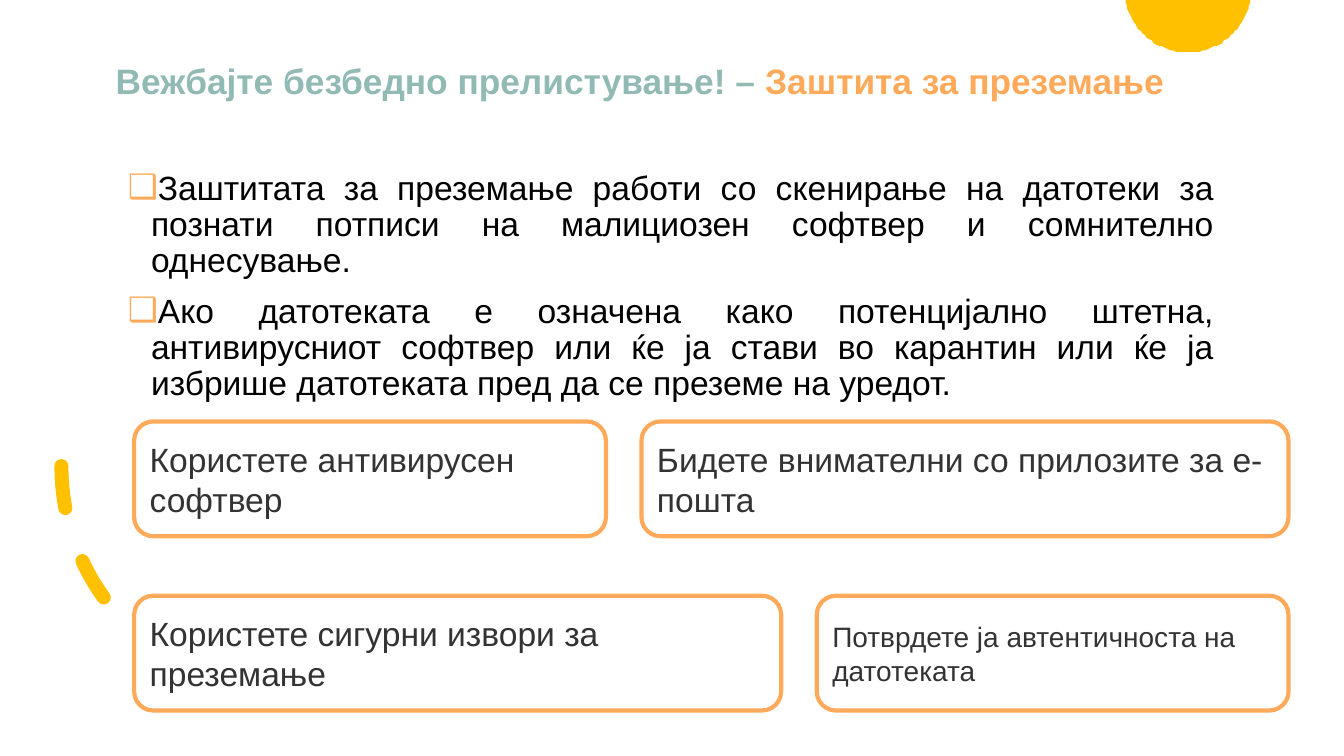
import math
from dataclasses import dataclass

import lxml.etree
import pptx
import pptx.dml.color
import pptx.enum.dml
import pptx.enum.shapes
import pptx.enum.text
import pptx.oxml.ns
import pptx.util

Pt = pptx.util.Pt
KIND = pptx.enum.shapes.MSO_SHAPE
ALIGN = pptx.enum.text.PP_ALIGN
ANCHOR = pptx.enum.text.MSO_ANCHOR
HUES = {
    "gold": "FFC000",
    "peach": "FFAA5A",
    "sage": "92BAB5",
    "ink": "333333",
    "black": "000000",
    "white": "FFFFFF",
}
FONT = "Arial"

# Grid of cards
LEFT, GAP = 95.8, 25.4
SHORT, LONG, HIGH = 337, 462.2, 82
ROWS = (301, 425.5)


@dataclass
class Card:
    text: str
    row: int
    left: float
    width: float
    size: float = 24
    kind: KIND = KIND.ROUNDED_RECTANGLE


CARDS = [
    Card("Користете антивирусен софтвер", 0, LEFT, SHORT,
         kind=KIND.FLOWCHART_ALTERNATE_PROCESS),
    Card("Користете сигурни извори за преземање", 1, LEFT, LONG),
    Card("Потврдете ја автентичноста на датотеката", 1, LEFT + LONG + GAP, SHORT, size=20),
    Card("Бидете внимателни со прилозите за е-пошта", 0, LEFT + SHORT + GAP, LONG),
]
POINTS = [
    "Заштитата за преземање работи со скенирање на датотеки за познати потписи "
    "на малициозен софтвер и сомнително однесување.",
    "Ако датотеката е означена како потенцијално штетна, антивирусниот софтвер "
    "или ќе ја стави во карантин или ќе ја избрише датотеката пред да се преземе на уредот.",
]


def rgb(hue: str) -> pptx.dml.color.RGBColor:
    return pptx.dml.color.RGBColor.from_string(HUES[hue])


def write(para, text: str, *, size: float, hue: str = "ink", bold: bool = False,
          align=ALIGN.LEFT, space: float = 1, before: float = 0) -> None:
    para.alignment = align
    para.line_spacing = space
    para.space_before = Pt(before)
    run = para.add_run()
    run.text = text
    run.font.name = FONT
    run.font.size = Pt(size)
    run.font.bold = bold
    run.font.color.rgb = rgb(hue)


def mark(para) -> None:
    """Give a paragraph its box bullet and hanging indent."""
    props = para._p.get_or_add_pPr()
    props.set("marL", str(Pt(18)))
    props.set("indent", str(Pt(-16.56)))
    tag = pptx.oxml.ns.qn
    tint = lxml.etree.SubElement(props, tag("a:buClr"))
    lxml.etree.SubElement(tint, tag("a:srgbClr")).set("val", HUES["peach"])
    lxml.etree.SubElement(props, tag("a:buFont")).set("typeface", FONT)
    lxml.etree.SubElement(props, tag("a:buChar")).set("char", "❑")


def add_box(slide, left: float, top: float, width: float, height: float, anchor):
    frame = slide.shapes.add_textbox(Pt(left), Pt(top), Pt(width), Pt(height)).text_frame
    frame.word_wrap = True
    frame.vertical_anchor = anchor
    return frame


def add_sun(slide) -> None:
    """Draw the part of a disc that hangs below the top edge."""
    mid, high, rad, steps = 848.5, -8.3, 45.7, 60
    start = math.asin(-high / rad)
    turn = (math.pi - 2 * start) / steps
    rim = [(mid + rad * math.cos(start + i * turn), high + rad * math.sin(start + i * turn))
           for i in range(steps + 1)]
    form = slide.shapes.build_freeform(*rim[0], scale=Pt(1))
    form.add_line_segments(rim[1:], close=True)
    sun = form.convert_to_shape()
    sun.shadow.inherit = False
    sun.fill.solid()
    sun.fill.fore_color.rgb = rgb("gold")
    sun.line.fill.background()


def add_arc(slide) -> None:
    side = Pt(321.8)
    arc = slide.shapes.add_shape(KIND.ARC, Pt(43.9), Pt(172.1), side, side)
    arc.shadow.inherit = False
    arc.rotation = 270
    arc.element.spPr.xfrm.set("flipH", "1")
    arc.fill.background()
    arc.line.color.rgb = rgb("gold")
    arc.line.width = Pt(10)
    arc.line.dash_style = pptx.enum.dml.MSO_LINE.DASH
    arc.element.spPr.get_or_add_ln().set("cap", "rnd")


def add_card(slide, card: Card) -> None:
    box = slide.shapes.add_shape(card.kind, Pt(card.left), Pt(ROWS[card.row]),
                                 Pt(card.width), Pt(HIGH))
    box.shadow.inherit = False
    box.fill.solid()
    box.fill.fore_color.rgb = rgb("white")
    box.line.color.rgb = rgb("peach")
    box.line.width = Pt(3)
    frame = box.text_frame
    frame.word_wrap = True
    frame.vertical_anchor = ANCHOR.MIDDLE
    write(frame.paragraphs[0], card.text, size=card.size)


def main() -> None:
    deck = pptx.Presentation()
    deck.slide_width, deck.slide_height = Pt(960), Pt(540)
    slide = deck.slides.add_slide(deck.slide_layouts[6])

    # Corner disc and title
    add_sun(slide)
    title = add_box(slide, 75.6, 28.8, 818.6, 61.2, ANCHOR.MIDDLE).paragraphs[0]
    for text, hue in (("Вежбајте безбедно прелистување! – ", "sage"),
                      ("Заштита за преземање", "peach")):
        write(title, text, size=25.2, hue=hue, bold=True, space=0.9)

    # Dashed arc, partly under the cards
    add_arc(slide)

    # Bullet points
    body = add_box(slide, 82.8, 118.8, 791.3, 167.8, ANCHOR.TOP)
    for i, text in enumerate(POINTS):
        para = body.add_paragraph() if i else body.paragraphs[0]
        write(para, text, size=24, hue="black", align=ALIGN.JUSTIFY,
              space=0.9, before=10 * i)
        mark(para)

    # Cards
    for card in CARDS:
        add_card(slide, card)

    deck.save("out.pptx")


if __name__ == "__main__":
    main()
